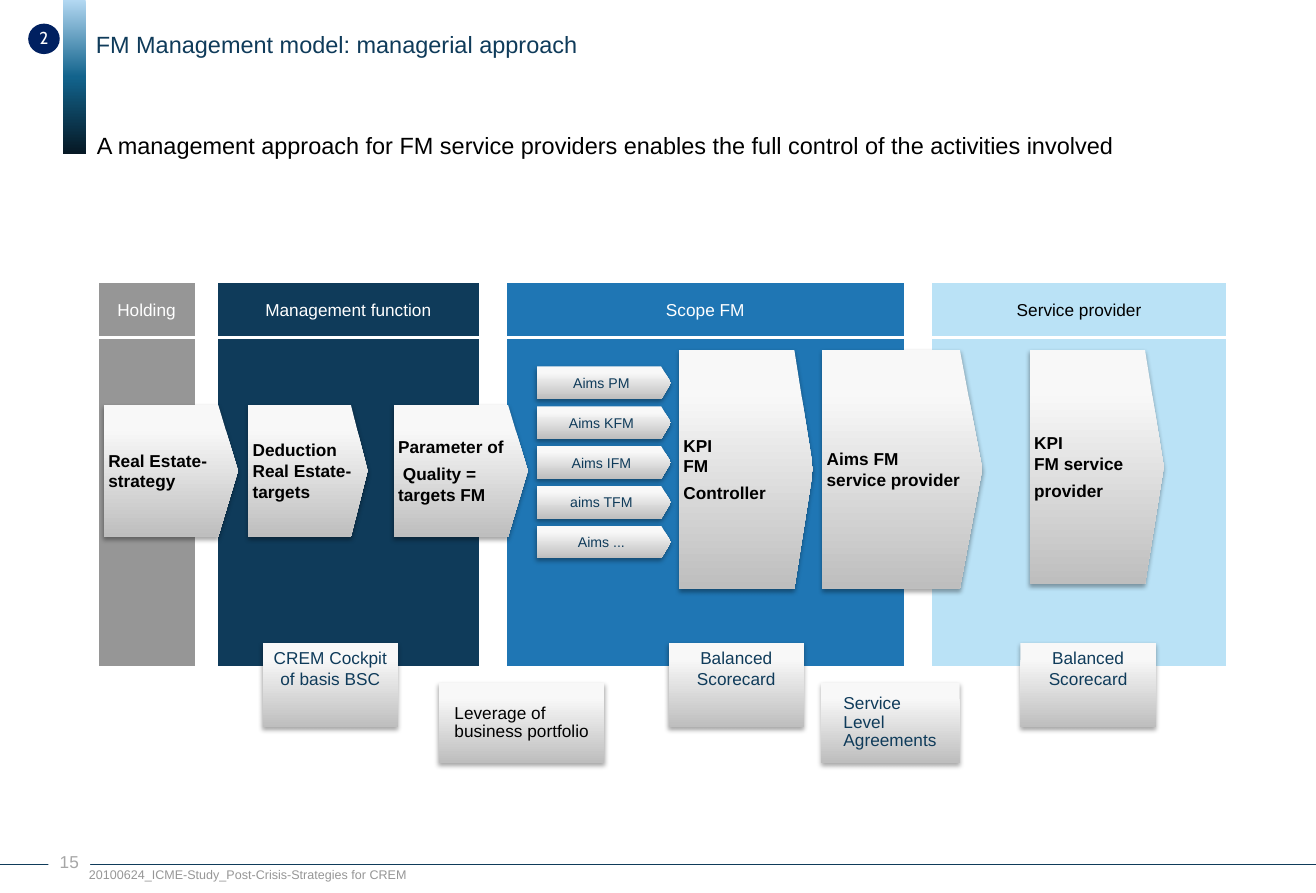
from copy import deepcopy

from pptx import Presentation
from pptx.dml.color import RGBColor
from pptx.enum.shapes import MSO_CONNECTOR, MSO_SHAPE as SHAPE
from pptx.enum.text import MSO_ANCHOR as ANCHOR, PP_ALIGN as ALIGN
from pptx.oxml import parse_xml
from pptx.oxml.ns import nsdecls, qn
from pptx.util import Inches, Pt

CELL = Inches(0.1)  # side of one grid column and row
COLS, ROWS = 116.7, 79.2
COLORS = {
    "navy": "0F3B5A", "blue": "1F76B4", "sky": "BAE2F6", "grey": "969696",
    "badge": "002060", "page": "A6A6A6", "white": "FFFFFF", "black": "000000",
}
SILVER = ((0, "F8F8F8"), (20, "F7F7F7"), (100, "BEBEBE"))
OCEAN = ((0, "B3D8F2"), (50, "12638C"), (100, "061824"))


def grid(*cells):
    return [round(c * CELL) for c in cells]


def rgb(name):
    return RGBColor.from_string(COLORS[name])


def write(sp, text, color, size=11, bold=False, align=ALIGN.LEFT,
          anchor=ANCHOR.MIDDLE, insets=(0, 0, 0, 0), spacing=None, font="Arial"):
    """Fill a shape with text; insets are left, top, right, bottom in cells."""
    tf = sp.text_frame
    tf.word_wrap = True
    tf.vertical_anchor = anchor
    tf.margin_left, tf.margin_top, tf.margin_right, tf.margin_bottom = grid(*insets)
    tf.text = text
    for i, p in enumerate(tf.paragraphs):
        p.alignment = align
        p.space_before = Pt(4 if i else 0)
        if spacing:
            p.line_spacing = spacing
        for r in p.runs:
            r.font.name, r.font.size, r.font.bold = font, Pt(size), bold
            r.font.color.rgb = rgb(color)
        for br in p._p.findall(qn("a:br")):
            br.append(deepcopy(p.runs[0]._r.rPr))


def add_plain(slide, kind, at, fill, outline=None):
    sp = slide.shapes.add_shape(kind, *grid(*at))
    sp.shadow.inherit = False
    sp.fill.solid()
    sp.fill.fore_color.rgb = rgb(fill)
    if outline:
        sp.line.color.rgb = rgb(outline)
        sp.line.width = Pt(2)
    else:
        sp.line.fill.background()
    return sp


def add_gradient(slide, kind, at, stops):
    """Add a shape shaded from top to bottom."""
    sp = add_plain(slide, kind, at, "white")
    sp.fill.gradient()
    sp.fill.gradient_angle = 270
    gs_list = sp._element.spPr.find(".//" + qn("a:gsLst"))
    gs_list[:] = [parse_xml(
        f'<a:gs {nsdecls("a")} pos="{pos * 1000}"><a:srgbClr val="{color}"/></a:gs>')
        for pos, color in stops]
    return sp


def add_silver(slide, kind, at):
    sp = add_gradient(slide, kind, at, SILVER)
    sp._element.spPr.find(qn("a:effectLst")).append(parse_xml(
        f'<a:outerShdw {nsdecls("a")} blurRad="{Pt(3.1)}" dist="{Pt(1.8)}" '
        'dir="5400000" rotWithShape="0"><a:srgbClr val="000000">'
        '<a:alpha val="35000"/></a:srgbClr></a:outerShdw>'))
    return sp


def add_arrow(slide, at, tip, text, **style):
    sp = add_silver(slide, SHAPE.PENTAGON, at)
    sp.adjustments[0] = tip
    write(sp, text, **style)


def add_column(slide, x, width, fill, heading, color):
    add_plain(slide, SHAPE.RECTANGLE, (x, 29.85, width, 29.4), fill, "white")
    head = add_plain(slide, SHAPE.RECTANGLE, (x, 24.95, width, 5), fill, "white")
    write(head, heading, color, align=ALIGN.CENTER)


def add_label(slide, at, text, color, **style):
    write(slide.shapes.add_textbox(*grid(*at)), text, color, **style)


def add_frame(slide):
    """Add the bar, the headings, the footer rule and the numbers."""
    add_gradient(slide, SHAPE.RECTANGLE, (5.6, 0, 2, 13.7), OCEAN)
    rule = slide.shapes.add_connector(MSO_CONNECTOR.STRAIGHT, *grid(0, 76.7, COLS, 76.7))
    rule.line.color.rgb = rgb("navy")
    rule.line.width = Pt(0.75)
    rule._element.spPr.append(parse_xml(f'<a:effectLst {nsdecls("a")}/>'))

    title = slide.shapes.title
    title.left, title.top, title.width, title.height = grid(8.6, 7.6, 102, 6.6)
    write(title, "A management approach for FM service providers enables "
          "the full control of the activities involved", "black", size=15,
          anchor=ANCHOR.BOTTOM, spacing=0.9)
    add_label(slide, (8.5, 2.7, 105, 2.5), "FM Management model: managerial approach",
              "navy", size=15)

    page = add_plain(slide, SHAPE.RECTANGLE, (4.3, 75, 3.7, 2.7), "white")
    write(page, "15", "page", align=ALIGN.CENTER, anchor=ANCHOR.TOP,
          insets=(0.2, 0.5, 0.2, 0.5))
    badge = add_plain(slide, SHAPE.OVAL, (2.5, 2.1, 2.8, 2.7), "badge")
    write(badge, "2", "white", align=ALIGN.CENTER, spacing=0.93, font="Cabin")
    add_label(slide, (6.9, 76.4, 35, 2.4),
              "20100624_ICME-Study_Post-Crisis-Strategies for CREM", "grey", size=8,
              anchor=ANCHOR.TOP, insets=(1, 0.5, 1, 0.5))


def main():
    prs = Presentation()
    prs.slide_width, prs.slide_height = grid(COLS, ROWS)
    slide = prs.slides.add_slide(prs.slide_layouts[5])
    add_frame(slide)

    for column in (
        (8.6, 8.8, "grey", "Holding", "white"),
        (19.2, 23.4, "navy", "Management function", "white"),
        (44.8, 35.5, "blue", "Scope FM", "white"),
        (82.5, 26.4, "sky", "Service provider", "black"),
    ):
        add_column(slide, *column)

    for x, y, width, height, tip, text in (
        (9.2, 35.9, 11.9, 11.7, 0.15, "Real Estate-\vstrategy"),
        (22, 35.9, 10.6, 11.7, 0.14, "Deduction\vReal Estate-\vtargets"),
        (34.9, 35.9, 11.9, 11.7, 0.15, "Parameter of\n Quality =\vtargets FM"),
        (60.2, 31, 11.9, 21.2, 0.14, "KPI\vFM\nController"),
        (72.9, 31, 14.2, 21.2, 0.14, "Aims FM\vservice provider"),
        (91.3, 31, 11.9, 20.8, 0.14, "KPI\vFM service\nprovider"),
    ):
        add_arrow(slide, (x, y, width, height), tip, text, color="black", bold=True,
                  insets=(0.4, 0.5, 0, 0.5))

    for i, aim in enumerate(("Aims PM", "Aims KFM", "Aims IFM", "aims TFM", "Aims ...")):
        add_arrow(slide, (47.6, 32.5 + 3.53 * i, 11.9, 2.9), 0.3, aim, color="navy",
                  size=9, align=ALIGN.CENTER)

    for x, text in ((23.3, "CREM Cockpit of basis BSC"),
                    (59.3, "Balanced Scorecard"), (90.5, "Balanced Scorecard")):
        card = add_silver(slide, SHAPE.RECTANGLE, (x, 57, 12, 7.5))
        write(card, text, "navy", align=ALIGN.CENTER, anchor=ANCHOR.TOP,
              insets=(0.4, 0.4, 0.4, 0.4))

    for x, width, indent, text, color in (
        (38.9, 14.7, 1.4, "Leverage of business portfolio", "black"),
        (72.8, 12.3, 2, "Service\vLevel Agreements", "navy"),
    ):
        note = add_silver(slide, SHAPE.RECTANGLE, (x, 60.55, width, 7.1))
        write(note, text, color, insets=(indent, 0.5, 0.4, 0.5), spacing=0.9)

    prs.save("out.pptx")


if __name__ == "__main__":
    main()
